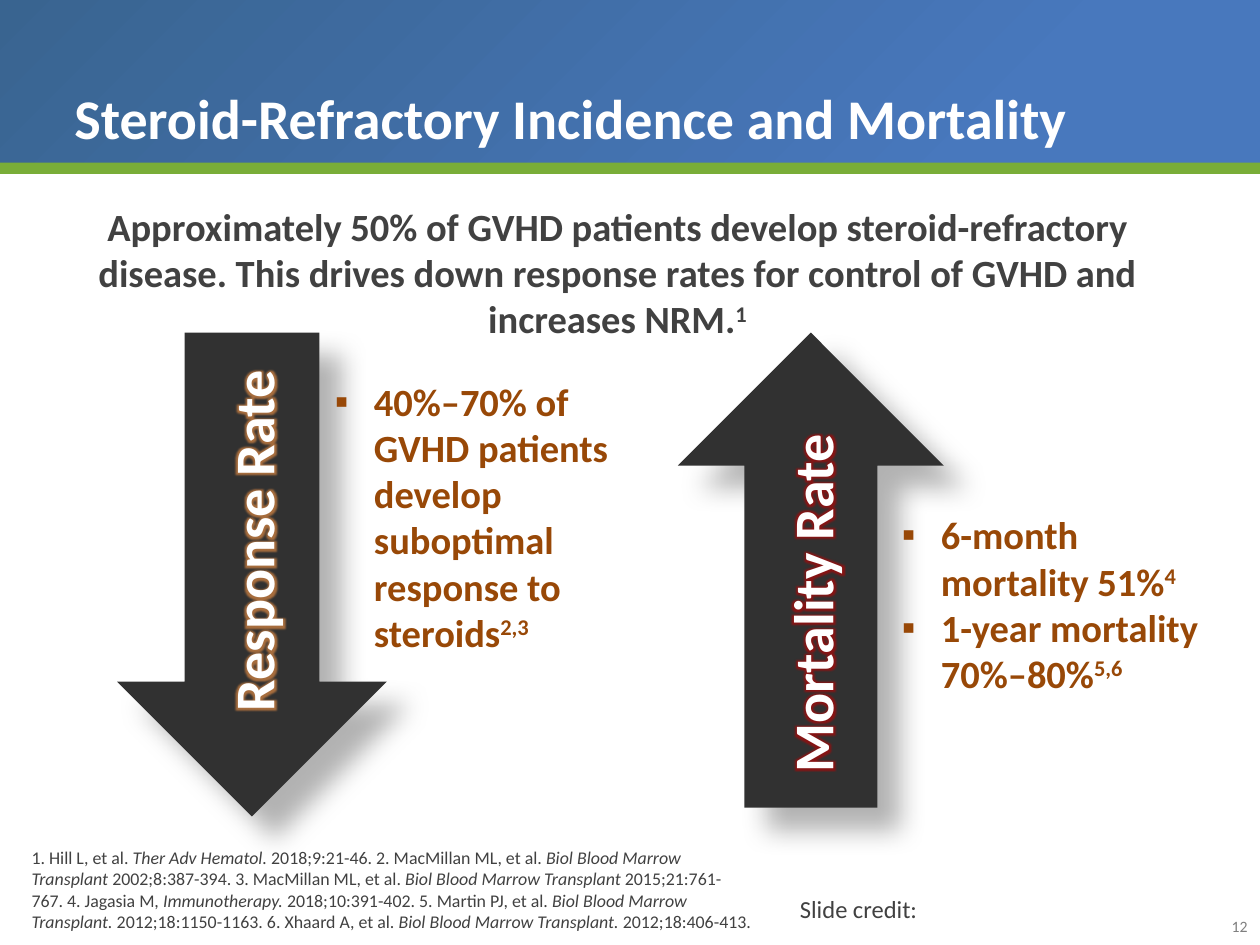
from lxml import etree
from pptx import Presentation
from pptx.dml.color import RGBColor
from pptx.enum.shapes import MSO_SHAPE
from pptx.enum.text import MSO_ANCHOR, MSO_AUTO_SIZE, PP_ALIGN
from pptx.oxml.ns import qn
from pptx.util import Inches, Pt

LEFT, CENTER, RIGHT = PP_ALIGN.LEFT, PP_ALIGN.CENTER, PP_ALIGN.RIGHT
MIDDLE, BOTTOM = MSO_ANCHOR.MIDDLE, MSO_ANCHOR.BOTTOM
NO_AUTOFIT = MSO_AUTO_SIZE.NONE
RECTANGLE, DOWN_ARROW = MSO_SHAPE.RECTANGLE, MSO_SHAPE.DOWN_ARROW

WHITE, DARK, GRAY = "FFFFFF", "414141", "7F7F7F"
ARROW_FILL, RUST, GREEN = "313131", "984807", "79AD38"
BANNER_DARK, BANNER_LIGHT = "396490", "4878BD"

TITLE_FORMAT = {"size": Pt(32), "bold": True, "color": WHITE}
STATEMENT_FORMAT = {"size": Pt(22), "bold": True, "color": DARK}
BULLET_FORMAT = {"size": Pt(22), "bold": True, "color": RUST}
REFERENCE_FORMAT = {"size": Pt(10.2), "color": DARK}
CREDIT_FORMAT = {"size": Pt(14), "color": DARK}
NUMBER_FORMAT = {"size": Pt(9), "color": GRAY}

# Plain and italic pieces alternate, starting with a plain one.
REFERENCES = [
    "1. Hill L, et al. ", "Ther Adv Hematol. ",
    "2018;9:21-46. 2. MacMillan ML, et al. ", "Biol Blood Marrow Transplant ",
    "2002;8:387-394. 3. MacMillan ML, et al. ", "Biol Blood Marrow Transplant ",
    "2015;21:761-767. 4. Jagasia M, ", "Immunotherapy.",
    " 2018;10:391-402. 5. Martin PJ, et al. ", "Biol Blood Marrow Transplant. ",
    "2012;18:1150-1163. 6. Xhaard A, et al. ", "Biol Blood Marrow Transplant. ",
    "2012;18:406-413.",
]


def rgb(value):
    return RGBColor.from_string(value)


def add_xml(parent, tag, **attributes):
    values = {name: str(value) for name, value in attributes.items()}
    return etree.SubElement(parent, qn(tag), values)


def place(shape, left, top, width, height):
    values = {"left": left, "top": top, "width": width, "height": height}
    for name, value in values.items():
        setattr(shape, name, Inches(value))


def add_run(paragraph, text, text_format, superscript=False):
    run = paragraph.add_run()
    run.text = text
    for name, value in {"name": "Calibri", **text_format}.items():
        if name == "color":
            run.font.color.rgb = rgb(value)
        else:
            setattr(run.font, name, value)
    if superscript:
        run.font._element.set("baseline", "30000")
    return run


def add_noted_text(paragraph, text, note, text_format):
    """Write text followed by its superscript reference numbers."""
    add_run(paragraph, text, text_format)
    add_run(paragraph, note, text_format, superscript=True)


def add_text_box(slide, box, wrap=True):
    text_frame = slide.shapes.add_textbox(*map(Inches, box)).text_frame
    text_frame.word_wrap = wrap
    return text_frame


def add_label(slide, box, text, text_format, alignment=LEFT, wrap=True):
    paragraph = add_text_box(slide, box, wrap).paragraphs[0]
    paragraph.alignment = alignment
    add_run(paragraph, text, text_format)


def add_bullets(slide, box, items):
    text_frame = add_text_box(slide, box)
    for index, (text, note) in enumerate(items):
        paragraph = text_frame.add_paragraph() if index else text_frame.paragraphs[0]
        properties = paragraph._p.get_or_add_pPr()
        properties.set("marL", str(Inches(0.31)))
        properties.set("indent", str(Inches(-0.31)))
        add_xml(properties, "a:buFont", typeface="Arial")
        add_xml(properties, "a:buChar", char="▪")
        add_noted_text(paragraph, text, note, BULLET_FORMAT)


def add_shape(slide, preset, box, color):
    shape = slide.shapes.add_shape(preset, *map(Inches, box))
    shape.shadow.inherit = False
    shape.fill.solid()
    shape.fill.fore_color.rgb = rgb(color)
    shape.line.fill.background()
    return shape


def add_banner(slide):
    banner = add_shape(slide, RECTANGLE, (0, 0, 10, 1.37), BANNER_DARK)
    banner.fill.gradient()
    stops = zip(banner.fill.gradient_stops, (BANNER_DARK, BANNER_LIGHT), (0, 0.79))
    for stop, color, position in stops:
        stop.color.rgb = rgb(color)
        stop.position = position
    gradient = banner._element.spPr.find(qn("a:gradFill"))
    gradient.remove(gradient.find(qn("a:lin")))
    path = add_xml(gradient, "a:path", path="circle")
    add_xml(path, "a:fillToRect", r=100000, b=100000)
    add_shape(slide, RECTANGLE, (0, 1.29, 10, 0.09), GREEN)


def add_glow_color(effect, color, alpha):
    add_xml(add_xml(effect, "a:srgbClr", val=color), "a:alpha", val=alpha * 1000)


def add_arrow(slide, box, text, direction, glow, rotation=0):
    arrow = add_shape(slide, DOWN_ARROW, box, ARROW_FILL)
    arrow.rotation = rotation
    effects = arrow._element.spPr.find(qn("a:effectLst"))
    shadow = add_xml(effects, "a:outerShdw", blurRad=Pt(15), dist=Pt(18),
                     dir=45 * 60000, algn="tl", rotWithShape=0)
    add_glow_color(shadow, "000000", 30)

    text_frame = arrow.text_frame
    text_frame.vertical_anchor = MIDDLE
    text_frame._txBody.bodyPr.set("vert", direction)
    paragraph = text_frame.paragraphs[0]
    paragraph.alignment = CENTER
    run = add_run(paragraph, text, TITLE_FORMAT)
    text_effects = etree.Element(qn("a:effectLst"))
    add_glow_color(add_xml(text_effects, "a:glow", rad=Pt(5)), glow, 60)
    run.font._element.find(qn("a:solidFill")).addnext(text_effects)


def prepare_placeholder(slide, placeholder, box):
    """Bring a placeholder in front of the banner and return its first paragraph."""
    slide.shapes._spTree.append(placeholder._element)
    place(placeholder, *box)
    text_frame = placeholder.text_frame
    text_frame.word_wrap = True
    text_frame.auto_size = NO_AUTOFIT
    text_frame.vertical_anchor = BOTTOM
    paragraph = text_frame.paragraphs[0]
    paragraph.alignment = LEFT
    paragraph.space_before = Pt(0)
    return paragraph


def fill_title(slide, text):
    paragraph = prepare_placeholder(slide, slide.shapes.title, (0.49, 0.1, 9.01, 1.15))
    paragraph.line_spacing = 0.9
    add_run(paragraph, text, TITLE_FORMAT)


def fill_references(slide, pieces):
    paragraph = prepare_placeholder(slide, slide.placeholders[1], (0.15, 6.63, 5.92, 0.82))
    paragraph.space_after = Pt(12)
    properties = paragraph._p.get_or_add_pPr()
    properties.set("marL", "0")
    properties.set("indent", "0")
    add_xml(properties, "a:buNone")
    for index, piece in enumerate(pieces):
        add_run(paragraph, piece, {**REFERENCE_FORMAT, "italic": index % 2 == 1})


def add_statement(slide, text, note):
    paragraph = add_text_box(slide, (0.49, 1.56, 8.82, 1.58)).paragraphs[0]
    paragraph.alignment = CENTER
    add_noted_text(paragraph, text, note, STATEMENT_FORMAT)


def main():
    presentation = Presentation()
    presentation.slide_width, presentation.slide_height = Inches(10), Inches(7.5)
    slide = presentation.slides.add_slide(presentation.slide_layouts[1])

    add_banner(slide)
    add_label(slide, (9.58, 7.23, 0.42, 0.25), "12", NUMBER_FORMAT, RIGHT)
    add_label(slide, (6.25, 7.05, 1.14, 0.34), "Slide credit:", CREDIT_FORMAT, wrap=False)
    fill_title(slide, "Steroid-Refractory Incidence and Mortality")
    fill_references(slide, REFERENCES)
    add_arrow(slide, (5.38, 2.64, 2.11, 3.77), "Mortality Rate", "vert", "C00000", 180)
    add_arrow(slide, (0.93, 2.64, 2.14, 3.84), "Response Rate", "vert270", "F79646")
    add_bullets(slide, (2.56, 2.95, 2.48, 2.32), [
        ("40%–70% of GVHD patients develop suboptimal response to steroids", "2,3"),
    ])
    add_bullets(slide, (7.06, 4.01, 2.55, 1.95), [
        ("6-month mortality 51%", "4"),
        ("1-year mortality 70%–80%", "5,6"),
    ])
    add_statement(slide, "Approximately 50% of GVHD patients develop steroid-refractory "
                  "disease. This drives down response rates for control of GVHD and "
                  "increases NRM.", "1")
    presentation.save("out.pptx")


if __name__ == "__main__":
    main()
